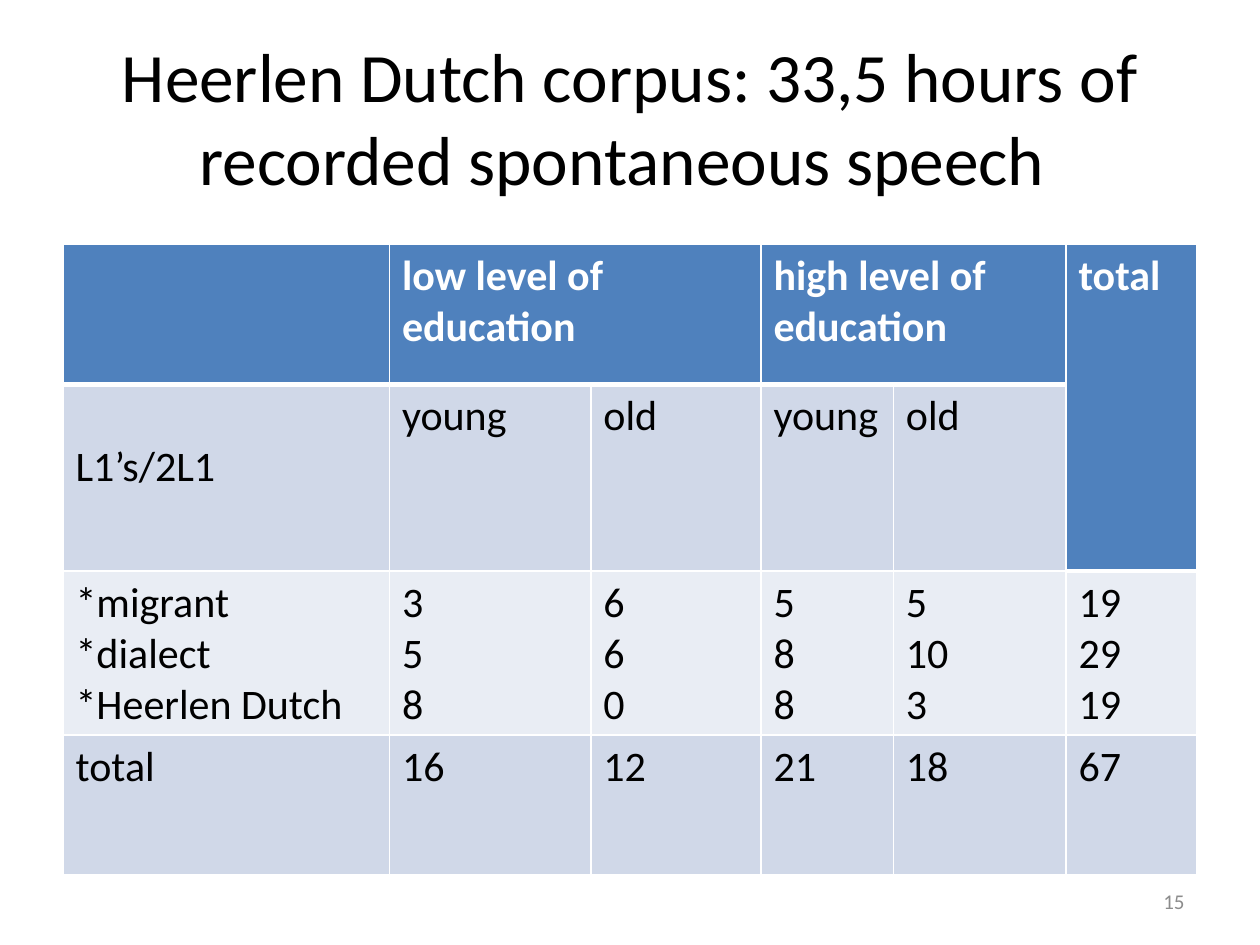
from dataclasses import dataclass

from lxml.etree import SubElement
from pptx import Presentation
from pptx.dml.color import RGBColor as RGB
from pptx.enum.text import MSO_ANCHOR as Anchor, PP_ALIGN as Align
from pptx.oxml.ns import qn
from pptx.util import Cm, Pt


@dataclass(frozen=True)
class Theme:
    font: str = "Calibri"
    ink: str = "000000"
    white: str = "FFFFFF"
    grey: str = "8C8C8C"
    head: str = "4F81BD"
    dark: str = "D0D8E8"
    light: str = "E9EDF4"
    title: float = 39.6
    body: float = 24
    small: float = 12
    thin: float = 1
    thick: float = 3


class Deck:
    def __init__(self, theme):
        self.theme = theme
        self.prs = Presentation()
        self.prs.slide_width, self.prs.slide_height = Cm(25.4), Cm(19.05)
        self.slide = self.prs.slides.add_slide(self.prs.slide_layouts[6])

    def text(self, frame, words, align=Align.LEFT, **style):
        """Fill a frame, one paragraph for each line of words."""
        for i, line in enumerate(words.split("\n")):
            par = frame.add_paragraph() if i else frame.paragraphs[0]
            par.alignment = align
            run = par.add_run()
            run.text = line
            look = {"name": self.theme.font, "size": Pt(self.theme.body),
                    "color": self.theme.ink, "bold": False} | style
            run.font.color.rgb = RGB.from_string(look.pop("color"))
            for key, val in look.items():
                setattr(run.font, key, val)

    def label(self, box, words, align, **style):
        frame = self.slide.shapes.add_textbox(*map(Cm, box)).text_frame
        for key, val in {"word_wrap": True,
                         "vertical_anchor": Anchor.MIDDLE}.items():
            setattr(frame, key, val)
        self.text(frame, words, align, **style)

    def edge(self, cell, side, width):
        line = SubElement(cell._tc.get_or_add_tcPr(), qn(f"a:ln{side}"),
                          w=str(Pt(width)))
        fill = SubElement(line, qn("a:solidFill"))
        SubElement(fill, qn("a:srgbClr"), val=self.theme.white)

    def paint(self, cell, color, sides):
        for side, width in sides.items():
            self.edge(cell, side, width)
        cell.fill.solid()
        cell.fill.fore_color.rgb = RGB.from_string(color)

    def table(self, left, top, cols, rows, data, spans):
        t = self.theme
        grid = self.slide.shapes.add_table(
            len(rows), len(cols), Cm(left), Cm(top),
            Cm(sum(cols)), Cm(sum(rows))).table
        for col, width in zip(grid.columns, cols):
            col.width = Cm(width)
        for row, height in zip(grid.rows, rows):
            row.height = Cm(height)
        for start, end in spans:
            grid.cell(*start).merge(grid.cell(*end))
        for r, line in enumerate(data):
            for c, words in enumerate(line):
                cell = grid.cell(r, c)
                head = r == 0 or (r == 1 and c == len(cols) - 1)
                sides = {"L": t.thin, "R": t.thin}
                if r == 0:
                    sides["T"] = t.thin
                sides["B"] = t.thick if head else t.thin
                band = t.dark if r % 2 else t.light
                self.paint(cell, t.head if head else band, sides)
                if words:
                    self.text(cell.text_frame, words, bold=head,
                              color=t.white if head else t.ink)
        return grid


def main():
    theme = Theme()
    deck = Deck(theme)
    deck.label((1.27, 0.76, 22.86, 3.18),
               "Heerlen Dutch corpus: 33,5 hours of recorded spontaneous speech ",
               Align.CENTER, size=Pt(theme.title))
    data = [
        ["", "low level of education", "", "high level of education", "", "total"],
        ["L1’s/2L1", "young", "old", "young", "old", ""],
        ["*migrant\n*dialect\n*Heerlen Dutch",
         "3\n5\n8", "6\n6\n0", "5\n8\n8", "5\n10\n3", "19\n29\n19"],
        ["total", "16", "12", "21", "18", "67"],
    ]
    grid = deck.table(1.27, 4.93, [6.58, 4.06, 3.43, 2.67, 3.48, 2.64],
                      [2.82, 3.76, 2.87, 2.82], data,
                      [((0, 1), (0, 2)), ((0, 3), (0, 4)), ((0, 5), (1, 5))])
    grid.cell(1, 0).margin_top = Cm(1.16)
    deck.label((18.21, 17.65, 5.92, 1.02), "15", Align.RIGHT,
               size=Pt(theme.small), color=theme.grey)
    deck.prs.save("out.pptx")


if __name__ == "__main__":
    main()
